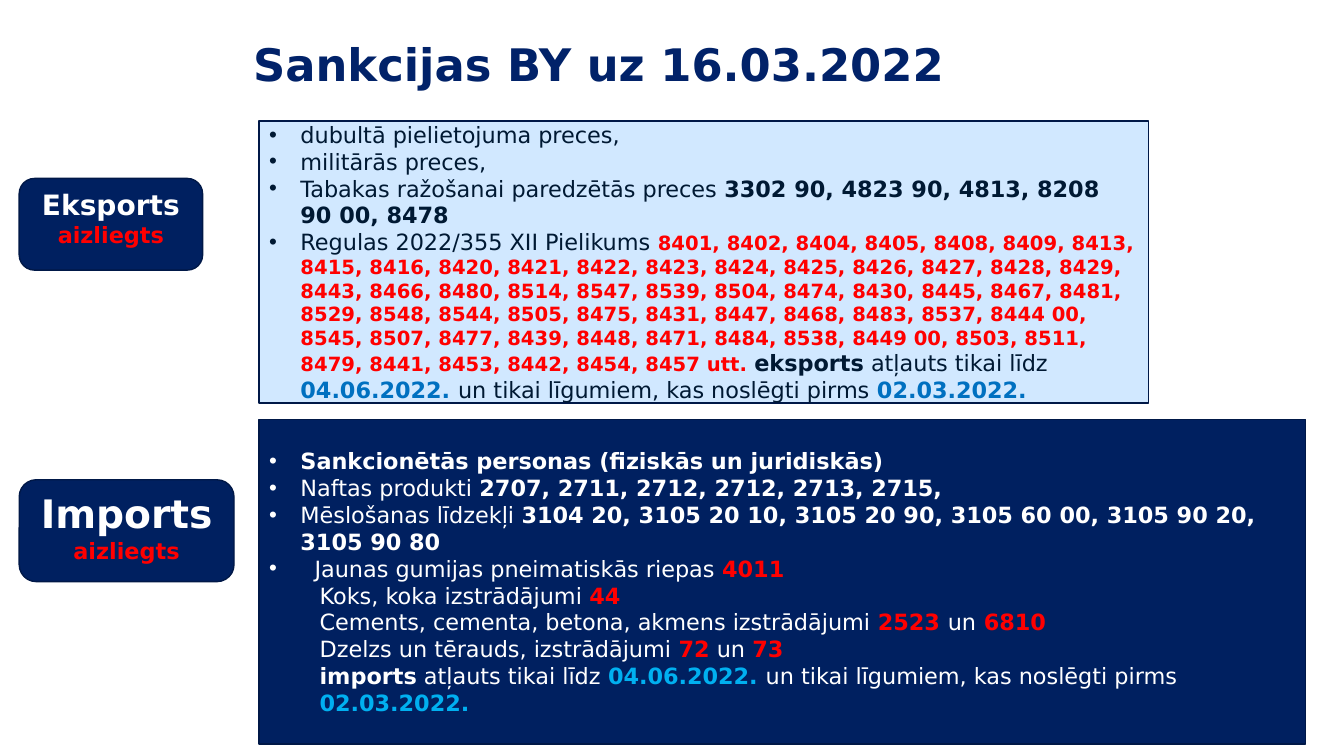
"""Build the slide on the export and import sanctions of 16.03.2022."""
from dataclasses import dataclass
from typing import Any

from lxml import etree
from pptx import Presentation
from pptx.dml.color import RGBColor
from pptx.enum.shapes import MSO_SHAPE
from pptx.enum.text import MSO_ANCHOR, MSO_AUTO_SIZE, PP_ALIGN
from pptx.oxml.ns import qn
from pptx.util import Inches, Pt

ROUNDED = MSO_SHAPE.ROUNDED_RECTANGLE
TOP, MIDDLE = MSO_ANCHOR.TOP, MSO_ANCHOR.MIDDLE
CENTER, LEFT = PP_ALIGN.CENTER, PP_ALIGN.LEFT
NO_AUTOFIT = MSO_AUTO_SIZE.NONE

WIDTH, HEIGHT = Inches(13.33), Inches(7.5)
FONT = "DejaVu Sans"
TITLE_BLUE = RGBColor(0x01, 0x22, 0x69)
NAVY = RGBColor(0x00, 0x20, 0x60)
OUTLINE = RGBColor(0x00, 0x18, 0x47)
PALE_BLUE = RGBColor(0xD1, 0xE8, 0xFF)
INK = RGBColor(0x00, 0x19, 0x33)
WHITE = RGBColor(0xFF, 0xFF, 0xFF)
RED = RGBColor(0xFF, 0x00, 0x00)
DATE_BLUE = RGBColor(0x00, 0x70, 0xC0)
DATE_SKY = RGBColor(0x00, 0xB0, 0xF0)

LABEL_LEFT, PANEL_LEFT = 1.43, 19.28


@dataclass(frozen=True)
class Area:
    """A rectangle in percent of the slide's width and height."""
    left: float
    top: float
    width: float
    height: float


@dataclass(frozen=True)
class Piece:
    """A stretch of text in one format."""
    text: str
    color: RGBColor
    bold: bool = False
    size: int = 16


@dataclass(frozen=True)
class Line:
    """A paragraph of a panel, with its indent in inches."""
    pieces: tuple[Piece, ...]
    margin: float = 0.31
    bulleted: bool = True


@dataclass(frozen=True)
class Panel:
    """A filled list."""
    area: Area
    fill: RGBColor
    lines: tuple[Line, ...]


@dataclass(frozen=True)
class Label:
    """A rounded tag naming a direction of trade."""
    area: Area
    pieces: tuple[Piece, ...]


def sub_line(*pieces: Piece) -> Line:
    """Return an indented line without a bullet."""
    return Line(pieces, 0.5, False)


EXPORT_CODES = (
    "8401, 8402, 8404, 8405, 8408, 8409, 8413, 8415, 8416, 8420, 8421, 8422, "
    "8423, 8424, 8425, 8426, 8427, 8428, 8429, 8443, 8466, 8480, 8514, 8547, "
    "8539, 8504, 8474, 8430, 8445, 8467, 8481, 8529, 8548, 8544, 8505, 8475, "
    "8431, 8447, 8468, 8483, 8537, 8444 00, 8545, 8507, 8477, 8439, 8448, 8471, "
    "8484, 8538, 8449 00, 8503, 8511, 8479, 8441, 8453, 8442, 8454, 8457 utt. "
)


def deadline(subject: str, color: RGBColor, date_color: RGBColor) -> tuple[Piece, ...]:
    """Return the closing sentence on the transition period."""
    return (
        Piece(subject, color, True),
        Piece(" atļauts tikai līdz ", color),
        Piece("04.06.2022. ", date_color, True),
        Piece("un tikai līgumiem, kas noslēgti pirms ", color),
        Piece("02.03.2022.", date_color, True),
    )


TITLE = Piece("Sankcijas BY uz 16.03.2022", TITLE_BLUE, True, 32)
TITLE_AREA = Area(LABEL_LEFT, 3.87, 86.27, 9.87)
BANNED = Piece("aizliegts", RED, True)
LABELS = (
    Label(Area(LABEL_LEFT, 23.6, 13.65, 12.13),
          (Piece("Eksports", WHITE, True, 20), BANNED)),
    Label(Area(LABEL_LEFT, 63.47, 15.98, 13.47),
          (Piece("Imports", WHITE, True, 28), BANNED)),
)
PANELS = (
    Panel(Area(PANEL_LEFT, 16, 66.17, 37.33), PALE_BLUE, (
        Line((Piece("dubultā pielietojuma preces,", INK),)),
        Line((Piece("militārās preces,", INK),)),
        Line((Piece("Tabakas ražošanai paredzētās preces ", INK),
              Piece("3302 90, 4823 90, 4813, 8208 90 00, 8478", INK, True))),
        Line((Piece("Regulas 2022/355 XII Pielikums ", INK),
              Piece(EXPORT_CODES, RED, True, 14),
              *deadline("eksports", INK, DATE_BLUE))),
    )),
    Panel(Area(PANEL_LEFT, 55.47, 77.87, 42.93), NAVY, (
        Line((Piece("Sankcionētās personas (fiziskās un juridiskās)", WHITE, True),)),
        Line((Piece("Naftas produkti ", WHITE),
              Piece("2707, 2711, 2712, 2712, 2713, 2715,", WHITE, True))),
        Line((Piece("Mēslošanas līdzekļi ", WHITE),
              Piece("3104 20, 3105 20 10, 3105 20 90, 3105 60 00, 3105 90 20, "
                    "3105 90 80", WHITE, True))),
        Line((Piece("Jaunas gumijas pneimatiskās riepas ", WHITE),
              Piece("4011", RED, True)), 0.45),
        sub_line(Piece("Koks, koka izstrādājumi ", WHITE), Piece("44", RED, True)),
        sub_line(Piece("Cements, cementa, betona, akmens izstrādājumi ", WHITE),
                 Piece("2523 ", RED, True), Piece("un", WHITE),
                 Piece(" 6810", RED, True)),
        sub_line(Piece("Dzelzs un tērauds, izstrādājumi ", WHITE),
                 Piece("72", RED, True), Piece(" un ", WHITE),
                 Piece("73", RED, True)),
        sub_line(*deadline("imports", WHITE, DATE_SKY)),
    )),
)


def box(area: Area) -> tuple[int, int, int, int]:
    """Turn shares of the slide into left, top, width and height."""
    return (round(WIDTH * area.left / 100), round(HEIGHT * area.top / 100),
            round(WIDTH * area.width / 100), round(HEIGHT * area.height / 100))


def place(shape: Any, area: Area) -> None:
    """Move and size a placeholder."""
    shape.left, shape.top, shape.width, shape.height = box(area)


def paint(shape: Any, fill: RGBColor) -> None:
    """Fill and outline a shape."""
    shape.fill.solid()
    shape.fill.fore_color.rgb = fill
    shape.line.color.rgb = OUTLINE
    shape.line.width = Pt(1)


def prepare_frame(shape: Any, anchor: MSO_ANCHOR) -> Any:
    """Set wrapping and anchoring, and return the text frame."""
    frame = shape.text_frame
    frame.word_wrap = True
    frame.auto_size = NO_AUTOFIT
    frame.vertical_anchor = anchor
    return frame


def next_paragraph(frame: Any, index: int, alignment: PP_ALIGN) -> Any:
    """Return the paragraph at the next position of a text frame."""
    paragraph = frame.paragraphs[0] if index == 0 else frame.add_paragraph()
    paragraph.alignment = alignment
    paragraph.space_before = Pt(0)
    return paragraph


def write(paragraph: Any, piece: Piece) -> None:
    """Add a formatted run to a paragraph."""
    run = paragraph.add_run()
    run.text = piece.text
    run.font.name = FONT
    run.font.size = Pt(piece.size)
    run.font.bold = piece.bold
    run.font.color.rgb = piece.color


def set_bullet(paragraph: Any, line: Line) -> None:
    """Set the indent and the bullet of a paragraph."""
    properties = paragraph._p.get_or_add_pPr()
    margin = Inches(line.margin)
    properties.set("marL", str(margin))
    properties.set("indent", str(-margin if line.bulleted else 0))
    if line.bulleted:
        etree.SubElement(properties, qn("a:buFont"), typeface="Arial")
        etree.SubElement(properties, qn("a:buChar"), char="•")
    else:
        etree.SubElement(properties, qn("a:buNone"))


def draw_title(shape: Any) -> None:
    """Write the slide title."""
    place(shape, TITLE_AREA)
    paragraph = next_paragraph(prepare_frame(shape, MIDDLE), 0, CENTER)
    paragraph.line_spacing = 0.9
    write(paragraph, TITLE)


def draw_panel(shape: Any, panel: Panel) -> None:
    """Write a list into a filled body placeholder."""
    place(shape, panel.area)
    paint(shape, panel.fill)
    frame = prepare_frame(shape, MIDDLE)
    for index, line in enumerate(panel.lines):
        paragraph = next_paragraph(frame, index, LEFT)
        paragraph.level = 0 if line.bulleted else 1
        set_bullet(paragraph, line)
        for piece in line.pieces:
            write(paragraph, piece)


def draw_label(slide: Any, label: Label) -> None:
    """Draw a rounded tag."""
    shape = slide.shapes.add_shape(ROUNDED, *box(label.area))
    shape.shadow.inherit = False
    paint(shape, NAVY)
    frame = prepare_frame(shape, TOP)
    for index, piece in enumerate(label.pieces):
        write(next_paragraph(frame, index, CENTER), piece)


def main() -> None:
    """Build and save the presentation."""
    presentation = Presentation()
    presentation.slide_width, presentation.slide_height = WIDTH, HEIGHT
    slide = presentation.slides.add_slide(presentation.slide_layouts[3])
    title, *bodies = slide.placeholders
    draw_title(title)
    for body, panel in zip(bodies, PANELS):
        draw_panel(body, panel)
    for label in LABELS:
        draw_label(slide, label)
    presentation.save("out.pptx")


if __name__ == "__main__":
    main()
